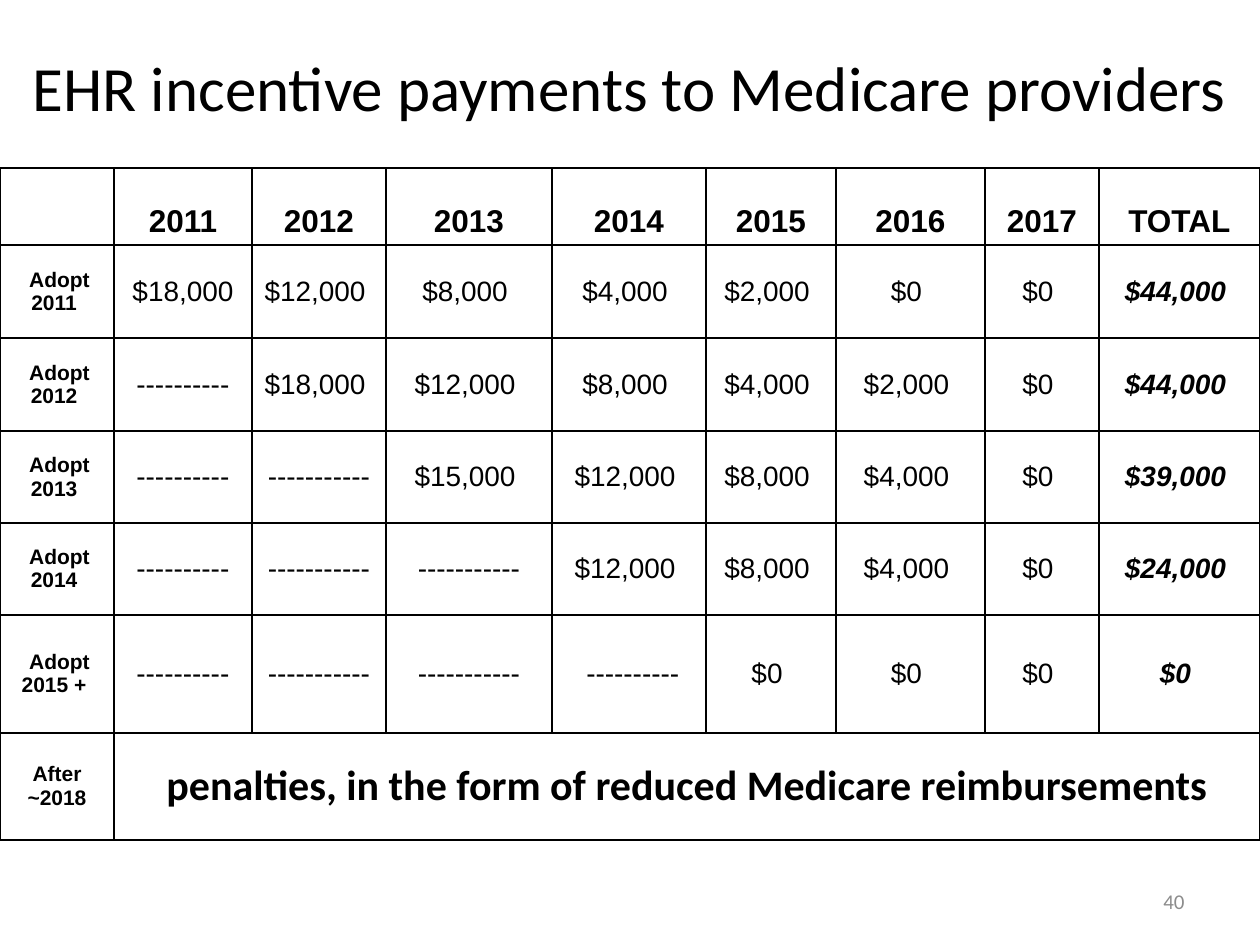
from lxml.etree import SubElement
from pptx import Presentation
from pptx.dml.color import RGBColor
from pptx.enum.text import MSO_ANCHOR, MSO_AUTO_SIZE, PP_ALIGN
from pptx.oxml.ns import qn
from pptx.util import Emu, Pt

EMU_PER_PX = 914400 / 126
COLORS = {"text": "000000", "border": "000000", "cell": "FFFFFF", "number": "8C8C8C"}
COLUMN_WIDTHS = [114, 138, 134, 166, 154, 130, 149, 114, 161]
ROW_HEIGHTS = [77, 93, 93, 92, 92, 118, 107]
SHORT_DASH = "-" * 10
LONG_DASH = "-" * 11
PAYMENTS = [
    ["", "2011", "2012", "2013", "2014", "2015", "2016", "2017", "TOTAL"],
    [" Adopt 2011 ", "$18,000", "$12,000 ", "$8,000 ", "$4,000 ", "$2,000 ", "$0 ", "$0 ", "$44,000 "],
    [" Adopt 2012 ", SHORT_DASH, "$18,000 ", "$12,000 ", "$8,000 ", "$4,000 ", "$2,000 ", "$0 ", "$44,000 "],
    [" Adopt 2013 ", SHORT_DASH, LONG_DASH, "$15,000 ", "$12,000 ", "$8,000 ", "$4,000 ", "$0 ", "$39,000 "],
    [" Adopt 2014 ", SHORT_DASH, LONG_DASH, LONG_DASH, "$12,000 ", "$8,000 ", "$4,000 ", "$0 ", "$24,000 "],
    [" Adopt 2015 + ", SHORT_DASH, LONG_DASH, LONG_DASH, " " + SHORT_DASH, "$0 ", "$0 ", "$0 ", "$0 "],
    ["After ~2018", "penalties, in the form of reduced Medicare reimbursements"],
]


def px(length):
    """Turn pixels into EMU."""
    return Emu(round(length * EMU_PER_PX))


def place(shape, left, top, width, height):
    """Set the position and size of a shape."""
    shape.left, shape.top = px(left), px(top)
    shape.width, shape.height = px(width), px(height)


def write(text_frame, text, size, font="Calibri", color="text", align=PP_ALIGN.CENTER, bold=False, italic=False):
    """Fill a text frame with one formatted paragraph."""
    text_frame.text = text
    paragraph = text_frame.paragraphs[0]
    paragraph.alignment = align
    for run in paragraph.runs:
        run.font.name = font
        run.font.size = Pt(size)
        run.font.bold = bold
        run.font.italic = italic
        run.font.color.rgb = RGBColor.from_string(COLORS[color])


def style_cell(cell):
    """Give a cell its four borders and its fill."""
    properties = cell._tc.get_or_add_tcPr()
    for side in ("a:lnL", "a:lnR", "a:lnT", "a:lnB"):
        line = SubElement(properties, qn(side), w=str(Pt(1)))
        fill = SubElement(line, qn("a:solidFill"))
        SubElement(fill, qn("a:srgbClr"), val=COLORS["border"])
    cell.fill.solid()
    cell.fill.fore_color.rgb = RGBColor.from_string(COLORS["cell"])


def cell_format(row, column):
    """Return the text format that belongs to a table position."""
    if row == 0:
        return {"size": 18, "font": "Arial", "bold": True}
    if column == 0:
        return {"size": 12, "font": "Arial", "bold": True}
    if row == len(PAYMENTS) - 1:
        return {"size": 24, "bold": True}
    total = column == len(COLUMN_WIDTHS) - 1
    return {"size": 16, "font": "Arial", "bold": total, "italic": total}


def add_payment_table(slide):
    """Add the table of payments by year of adoption."""
    table = slide.shapes.add_table(
        len(ROW_HEIGHTS), len(COLUMN_WIDTHS),
        px(0), px(168), px(sum(COLUMN_WIDTHS)), px(sum(ROW_HEIGHTS)),
    ).table
    table.first_row = table.horz_banding = False
    for column, width in zip(table.columns, COLUMN_WIDTHS):
        column.width = px(width)
    for row, height in zip(table.rows, ROW_HEIGHTS):
        row.height = px(height)
    for cell in table.iter_cells():
        style_cell(cell)
    last_row = len(ROW_HEIGHTS) - 1
    table.cell(last_row, 1).merge(table.cell(last_row, len(COLUMN_WIDTHS) - 1))
    for row, texts in enumerate(PAYMENTS):
        for column, text in enumerate(texts):
            cell = table.cell(row, column)
            cell.vertical_anchor = MSO_ANCHOR.MIDDLE if row else MSO_ANCHOR.BOTTOM
            write(cell.text_frame, text, **cell_format(row, column))


def add_title(slide, text):
    """Place and format the slide title."""
    title = slide.shapes.title
    place(title, 20, 42, 1230, 90)
    text_frame = title.text_frame
    text_frame.word_wrap = False
    text_frame.auto_size = MSO_AUTO_SIZE.SHAPE_TO_FIT_TEXT
    text_frame.vertical_anchor = MSO_ANCHOR.TOP
    write(text_frame, text, 36, align=PP_ALIGN.LEFT)


def add_slide_number(slide, text):
    """Add the slide number at the bottom right."""
    text_frame = slide.shapes.add_textbox(px(903), px(876), px(294), px(50)).text_frame
    text_frame.word_wrap = True
    text_frame.vertical_anchor = MSO_ANCHOR.MIDDLE
    write(text_frame, text, 12, color="number", align=PP_ALIGN.RIGHT)


def main():
    """Build and save the slide."""
    presentation = Presentation()
    presentation.slide_width, presentation.slide_height = px(1260), px(945)
    slide = presentation.slides.add_slide(presentation.slide_layouts[5])
    add_title(slide, "EHR incentive payments to Medicare providers")
    add_payment_table(slide)
    add_slide_number(slide, "40")
    presentation.save("out.pptx")


if __name__ == "__main__":
    main()
